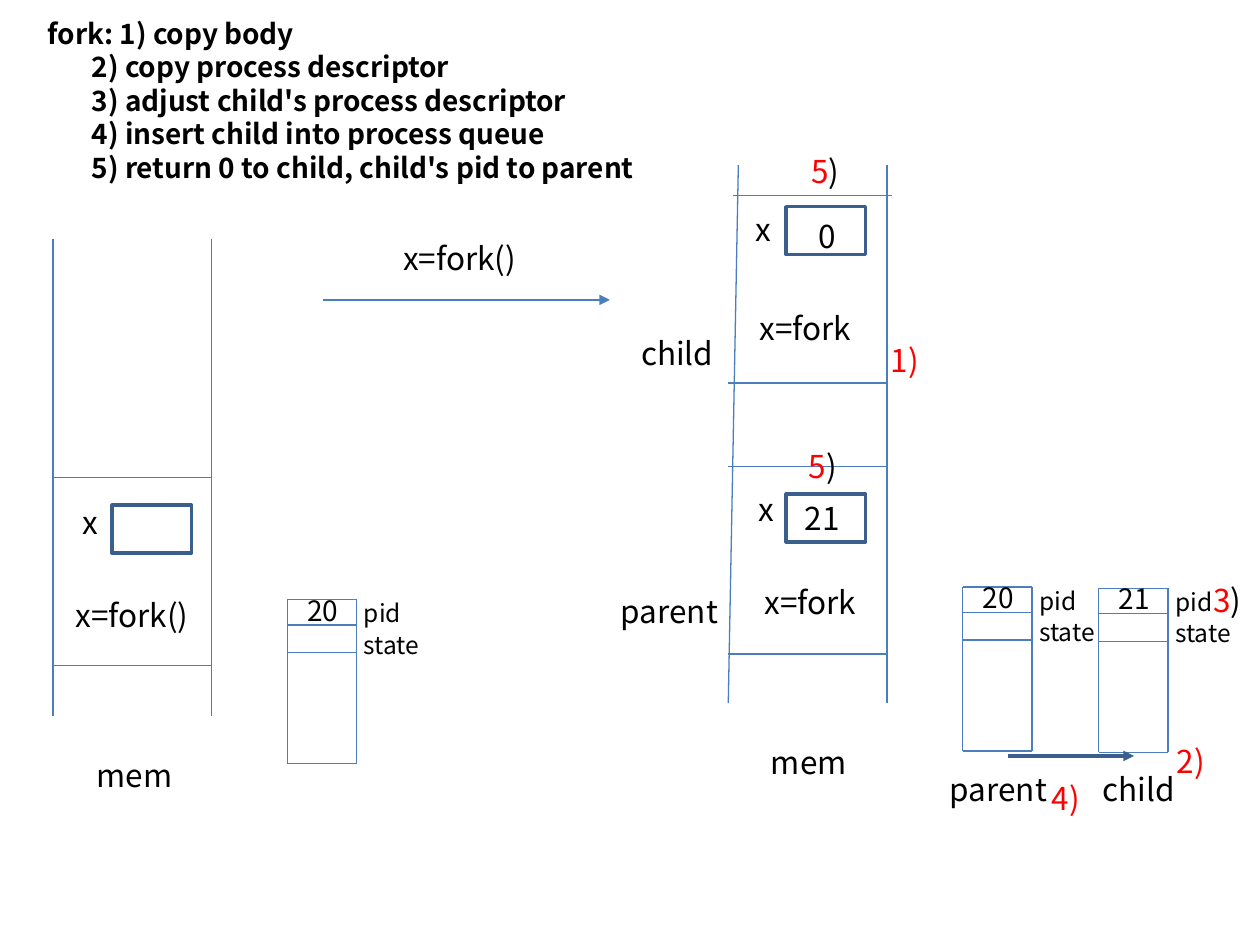
from pptx import Presentation
from pptx.util import Inches, Pt
from pptx.dml.color import RGBColor as Rgb
from pptx.enum.shapes import MSO_CONNECTOR as Conn, MSO_SHAPE as Shp
from pptx.oxml.ns import qn
from lxml.etree import SubElement as Sub

FONT = "Noto Sans CJK KR"
BLACK, RED, BLUE, NAVY = "000000", "FF0000", "4B7EBC", "3A5F8C"

prs = Presentation()
prs.slide_width, prs.slide_height = Inches(10), Inches(7.5)
shapes = prs.slides.add_slide(prs.slide_layouts[6]).shapes


def line(x1, y1, x2, y2):
    con = shapes.add_connector(Conn.STRAIGHT, *map(Inches, (x1, y1, x2, y2)))
    con.line.color.rgb = Rgb.from_string(BLUE)
    con.line.width = Pt(0.75)
    Sub(con._element.spPr, qn("a:effectLst"))
    return con


def text(x, y, w, h, rows, size=18, bold=False):
    """Each row is a list of (words, colour) runs."""
    frame = shapes.add_textbox(*map(Inches, (x, y, w, h))).text_frame
    frame.word_wrap = True
    for i, row in enumerate(rows):
        par = frame.add_paragraph() if i else frame.paragraphs[0]
        if i:
            par._p.get_or_add_pPr().set("marL", str(Inches(0.35)))
        for words, color in row:
            run = par.add_run()
            run.text = words
            font = run.font
            font.name, font.size, font.bold = FONT, Pt(size), bold
            font.color.rgb = Rgb.from_string(color)


# Memory columns: two walls, then the borders between regions
for wall in [(0.42, 1.9, 0.42, 5.68), (1.68, 1.9, 1.68, 5.68),
             (5.86, 1.31, 5.78, 5.58), (7.04, 1.31, 7.04, 5.58)]:
    line(*wall)
for x, y in [(0.42, 3.79), (0.42, 5.28), (5.82, 1.55),
             (5.78, 3.04), (5.78, 3.7), (5.78, 5.19)]:
    line(x, y, x + 1.26, y)

# Variable boxes
for x, y in [(0.89, 4.01), (6.24, 3.92), (6.24, 1.64)]:
    box = shapes.add_shape(Shp.RECTANGLE, *map(Inches, (x, y, 0.63, 0.38)))
    box.shadow.inherit = False
    box.fill.background()
    box.line.color.rgb = Rgb.from_string(NAVY)
    box.line.width = Pt(2)

# Process descriptors
for x, y, pid in [(2.28, 4.76, "20"), (7.64, 4.66, "20"), (8.72, 4.67, "21")]:
    for side in (x, x + 0.55):
        line(side, y, side, y + 1.3)
    for drop in (0, 0.2, 0.42, 1.3):
        line(x, y + drop, x + 0.55, y + drop)
    text(x + 0.06, y - 0.1, 0.57, 0.37, [[(pid, BLACK)]], 16)
    for name, drop in [("pid", -0.06), ("state", 0.19)]:
        text(x + 0.51, y + drop, 0.7, 0.34, [[(name, BLACK)]], 14)

# Fork arrow and queue arrow
fork = line(2.56, 2.38, 4.84, 2.38)
pts = [(8.22, 6.06), (8.3, 6.08), (8.4, 6.11), (8.44, 6.13),
       (8.53, 6.13), (8.6, 6.11), (8.63, 6.06), (8.63, 6.03)]
path = shapes.build_freeform(*pts[0], scale=Inches(1))
path.add_line_segments(pts[1:], close=False)
queue = path.convert_to_shape()
queue.shadow.inherit = False
queue.fill.background()
queue.line.color.rgb = Rgb.from_string(NAVY)
queue.line.width = Pt(2)
for arrow in (fork, queue):
    Sub(arrow.line._get_or_add_ln(), qn("a:tailEnd"), type="triangle")

# Labels
for x, y, w, words in [
    (3.1, 1.85, 1.19, "x=fork()"), (0.5, 4.68, 1.14, "x=fork()"),
    (5.97, 4.58, 1.03, "x=fork"), (5.93, 2.4, 1.03, "x=fork"),
    (0.67, 5.95, 1.26, "mem"), (6.02, 5.85, 1.26, "mem"),
    (0.56, 3.94, 0.29, "x"), (5.92, 3.84, 0.29, "x"), (5.9, 1.62, 0.29, "x"),
    (6.29, 3.91, 0.54, "21"), (6.4, 1.67, 0.54, "0"),
    (4.99, 2.6, 1.21, "child"), (4.83, 4.65, 1.21, "parent"),
    (7.44, 6.06, 1.21, "parent"), (8.65, 6.06, 1.21, "child"),
]:
    text(x, y, w, 0.4, [[(words, BLACK)]])

# Step marks
for x, y, num, end in [
    (6.97, 2.66, "1", RED), (9.24, 5.84, "2", RED), (9.53, 4.56, "3", BLACK),
    (8.25, 6.13, "4", RED), (6.34, 1.16, "5", BLACK), (6.32, 3.5, "5", BLACK),
]:
    runs = [(num + ")", RED)] if end == RED else [(num, RED), (")", end)]
    text(x, y, 0.49, 0.4, [runs])

# Steps of fork
steps = ["fork: 1) copy body", "2) copy process descriptor",
         "3) adjust child's process descriptor",
         "4) insert child into process queue",
         "5) return 0 to child, child's pid to parent"]
text(0.28, 0.08, 5.07, 1.45, [[(step, BLACK)] for step in steps], 16, True)

prs.save("out.pptx")
